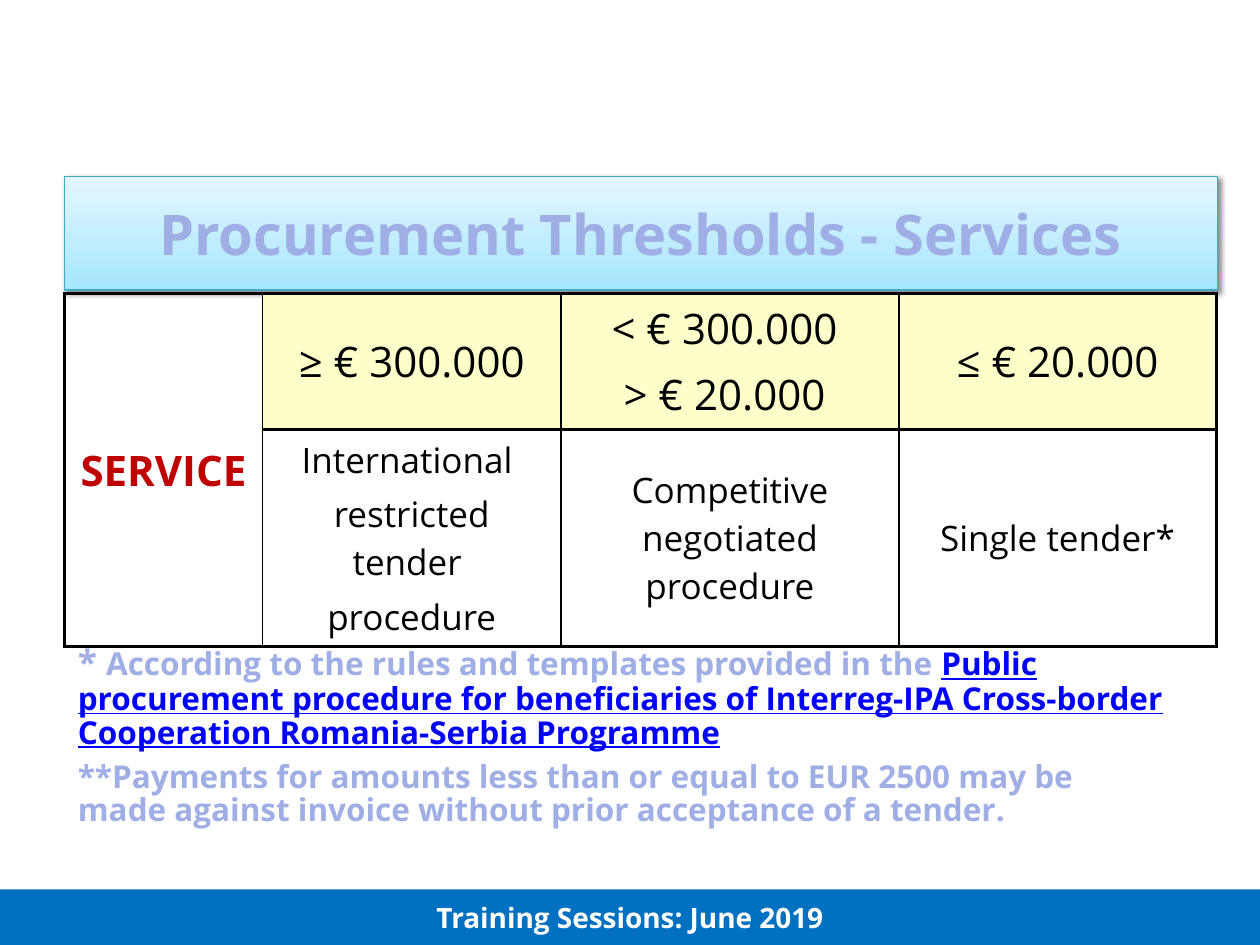
from lxml.etree import SubElement
from pptx import Presentation
from pptx.dml.color import RGBColor
from pptx.enum.shapes import MSO_SHAPE
from pptx.enum.text import MSO_ANCHOR, PP_ALIGN
from pptx.oxml import parse_xml
from pptx.oxml.ns import nsdecls, qn
from pptx.util import Cm, Pt

FONT = "Open Sans"
LAVENDER, BLUE, RED = "9FAEE5", "0000FF", "C00000"
BLACK, WHITE, CREAM = "000000", "FFFFFF", "FFFFCC"


def rgb(value):
    return RGBColor.from_string(value)


class Deck:
    """Holds the presentation style and the current slide."""

    def __init__(self, width, height):
        self.prs = Presentation()
        self.prs.slide_width, self.prs.slide_height = Cm(width), Cm(height)
        self.s = self.prs.slides.add_slide(self.prs.slide_layouts[6])

    def run(self, p, text, size, color, bold=False, underline=False):
        r = p.add_run()
        r.text = text
        r.font.name, r.font.size = FONT, Pt(size)
        r.font.bold, r.font.underline = bold, underline
        r.font.color.rgb = rgb(color)

    def bar(self, box, text, size, color):
        sp = self.s.shapes.add_shape(MSO_SHAPE.RECTANGLE, *map(Cm, box))
        sp.shadow.inherit = False
        sp.line.fill.background()
        tf = sp.text_frame
        tf.word_wrap = True
        tf.vertical_anchor = MSO_ANCHOR.MIDDLE
        p = tf.paragraphs[0]
        p.alignment = PP_ALIGN.CENTER
        self.run(p, text, size, color, bold=True)
        return sp

    def footer(self, box, text):
        sp = self.bar(box, text, 16, WHITE)
        sp.fill.solid()
        sp.fill.fore_color.rgb = rgb("0070C0")

    def title(self, box, text):
        sp = self.bar(box, text, 32, LAVENDER)
        sp.fill.gradient()
        sp.fill.gradient_angle = 270
        for stop, color in zip(sp.fill.gradient_stops, ("E4F7FF", "A5E6FF")):
            stop.color.rgb = rgb(color)
        sp.line.color.rgb = rgb("46AAC5")
        sp.line.width = Pt(0.75)
        effects = sp._element.spPr.find(qn("a:effectLst"))
        shadow = SubElement(effects, qn("a:outerShdw"), blurRad="40000",
                            dist="23000", dir="2700000", rotWithShape="0")
        tint = SubElement(shadow, qn("a:srgbClr"), val=BLACK)
        SubElement(tint, qn("a:alpha"), val="45000")

    def borders(self, cell, widths):
        tcPr = cell._tc.get_or_add_tcPr()
        for i, (side, width) in enumerate(zip("LRTB", widths)):
            tcPr.insert(i, parse_xml(
                f'<a:ln{side} {nsdecls("a")} w="{Pt(width)}"><a:solidFill>'
                f'<a:srgbClr val="{BLACK}"/></a:solidFill></a:ln{side}>'))

    def cell(self, cell, lines, size, color, fill=None, bold=False):
        cell.vertical_anchor = MSO_ANCHOR.MIDDLE
        if fill:
            cell.fill.solid()
            cell.fill.fore_color.rgb = rgb(fill)
        else:
            cell.fill.background()
        tf = cell.text_frame
        for i, line in enumerate(lines):
            p = tf.add_paragraph() if i else tf.paragraphs[0]
            p.alignment = PP_ALIGN.CENTER
            if i:
                p.space_before = Pt(size * 0.2)
            self.run(p, line, size, color, bold)

    def table(self, left, top, cols, rows, label, thresholds, procedures):
        frame = self.s.shapes.add_table(len(rows), len(cols), Cm(left), Cm(top),
                                        Cm(sum(cols)), Cm(sum(rows)))
        table = frame.table
        table.first_row = table.horz_banding = False
        for column, width in zip(table.columns, cols):
            column.width = Cm(width)
        for row, height in zip(table.rows, rows):
            row.height = Cm(height)
        self.cell(table.cell(0, 0), [label], 24, RED, bold=True)
        for c, (limit, procedure) in enumerate(zip(thresholds, procedures), 1):
            self.cell(table.cell(0, c), limit, 24, BLACK, CREAM)
            self.cell(table.cell(1, c), procedure, 20, BLACK)
        for r in range(len(rows)):
            for c in range(len(cols)):
                left_line = 2.25 if c == 0 else 1
                right_line = 2.25 if c == len(cols) - 1 else 1
                self.borders(table.cell(r, c), (left_line, right_line, 2.25, 2.25))
        table.cell(0, 0).merge(table.cell(1, 0))

    def notes(self, box, rule, link, payment):
        tf = self.s.shapes.add_textbox(*map(Cm, box)).text_frame
        tf.word_wrap = True
        p = tf.paragraphs[0]
        p.line_spacing = 0.89
        self.run(p, "* ", 20, LAVENDER, True)
        self.run(p, rule, 18, LAVENDER, True)
        self.run(p, link, 18, BLUE, True, True)
        p = tf.add_paragraph()
        p.line_spacing, p.space_before = 0.89, Pt(6)
        for i, line in enumerate(payment):
            if i:
                p.add_line_break()
            self.run(p, line, 18, LAVENDER, True)


def main():
    deck = Deck(25.4, 19.05)
    deck.footer((0, 17.93, 25.4, 1.12), "Training Sessions: June 2019")
    deck.title((1.3, 3.56, 23.24, 2.29), "Procurement Thresholds - Services")
    deck.table(
        1.3, 5.92, (3.99, 6.02, 6.81, 6.4), (2.26, 3.89), "SERVICE ",
        (["≥ € 300.000"], ["< € 300.000 ", "> € 20.000 "], ["≤ € 20.000"]),
        (["International ", "restricted tender ", "procedure"],
         ["Competitive negotiated procedure"], ["Single tender*"]))
    deck.notes(
        (1.32, 12.9, 23.44, 4.34),
        "According to the rules and templates provided in the ",
        "Public procurement procedure for beneficiaries of Interreg-IPA "
        "Cross-border Cooperation Romania-Serbia Programme",
        ("**Payments for amounts less than or equal to EUR 2500 may be",
         "made against invoice without prior acceptance of a tender."))
    deck.prs.save("out.pptx")


if __name__ == "__main__":
    main()
